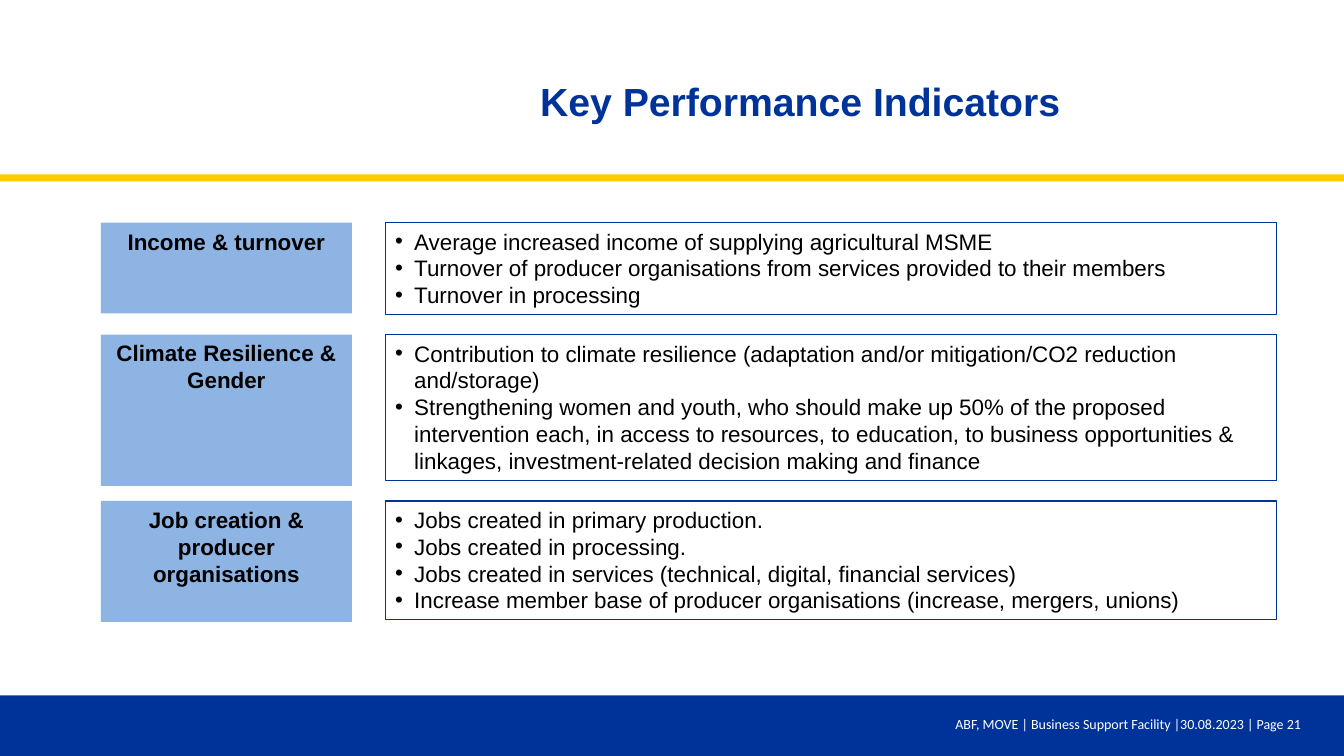
import pptx
import pptx.util
import pptx.dml.color
import pptx.enum.shapes
import pptx.enum.text
import lxml.etree

Inches = pptx.util.Inches
Align = pptx.enum.text.PP_ALIGN
BLUE, YELLOW, LIGHT_BLUE, WHITE, BLACK = "003399", "FFCC00", "8EB4E3", "FFFFFF", "000000"


def color(hex_code):
    return pptx.dml.color.RGBColor.from_string(hex_code)


def write(text, at, fill=None, line=None, size=16, font="Arial", ink=BLACK,
          bold=False, align=Align.LEFT, bullet=False):
    box = slide.shapes.add_shape(
        pptx.enum.shapes.MSO_SHAPE.RECTANGLE, *map(Inches, at)
    ) if fill else slide.shapes.add_textbox(*map(Inches, at))
    if fill:
        box.shadow.inherit = False
        box.fill.solid()
        box.fill.fore_color.rgb = color(fill)
        if line:
            box.line.color.rgb = color(line)
            box.line.width = pptx.util.Pt(0.75)
        else:
            box.line.fill.background()
    frame = box.text_frame
    frame.word_wrap = True
    frame.vertical_anchor = pptx.enum.text.MSO_ANCHOR.TOP
    frame.text = text
    for paragraph in frame.paragraphs:
        paragraph.alignment = align
        if bullet:
            props = paragraph._p.get_or_add_pPr()
            props.set("marL", str(Inches(0.19)))
            props.set("indent", str(-Inches(0.19)))
            namespace = "{http://schemas.openxmlformats.org/drawingml/2006/main}"
            lxml.etree.SubElement(props, namespace + "buFont", typeface="Arial")
            lxml.etree.SubElement(props, namespace + "buChar", char="•")
        paragraph.font.size = pptx.util.Pt(size)
        paragraph.font.name = font
        paragraph.font.bold = bold
        paragraph.font.color.rgb = color(ink)


deck = pptx.Presentation()
deck.slide_width, deck.slide_height = Inches(13.33), Inches(7.5)
slide = deck.slides.add_slide(deck.slide_layouts[6])

write("", (0, 6.9, 13.33, 0.6), fill=BLUE)
write("ABF, MOVE | Business Support Facility |30.08.2023 | Page 21", (8.72, 7.05, 4.28, 0.27),
      size=10, font="Calibri", ink=WHITE, align=Align.RIGHT)
write("", (0, 1.73, 13.33, 0.07), fill=YELLOW)
write("Key Performance Indicators", (4.69, 0.72, 6.49, 0.57),
      size=28, ink=BLUE, bold=True, align=Align.CENTER)

indicators = [
    ("Income & turnover", 2.21, 0.9, 0.91, [
        "Average increased income of supplying agricultural MSME",
        "Turnover of producer organisations from services provided to their members",
        "Turnover in processing",
    ]),
    ("Climate Resilience & Gender", 3.32, 1.5, 1.45, [
        "Contribution to climate resilience (adaptation and/or mitigation/CO2 reduction and/storage)",
        "Strengthening women and youth, who should make up 50% of the proposed intervention each, "
        "in access to resources, to education, to business opportunities & linkages, "
        "investment-related decision making and finance",
    ]),
    ("Job creation & producer organisations", 4.97, 1.2, 1.18, [
        "Jobs created in primary production.",
        "Jobs created in processing.",
        "Jobs created in services (technical, digital, financial services)",
        "Increase member base of producer organisations (increase, mergers, unions)",
    ]),
]
for topic, top, topic_height, details_height, details in indicators:
    write(topic, (1, top, 2.49, topic_height), fill=LIGHT_BLUE, bold=True, align=Align.CENTER)
    write("\n".join(details), (3.82, top, 8.84, details_height),
          fill=WHITE, line=BLUE, bullet=True)

deck.save("out.pptx")
